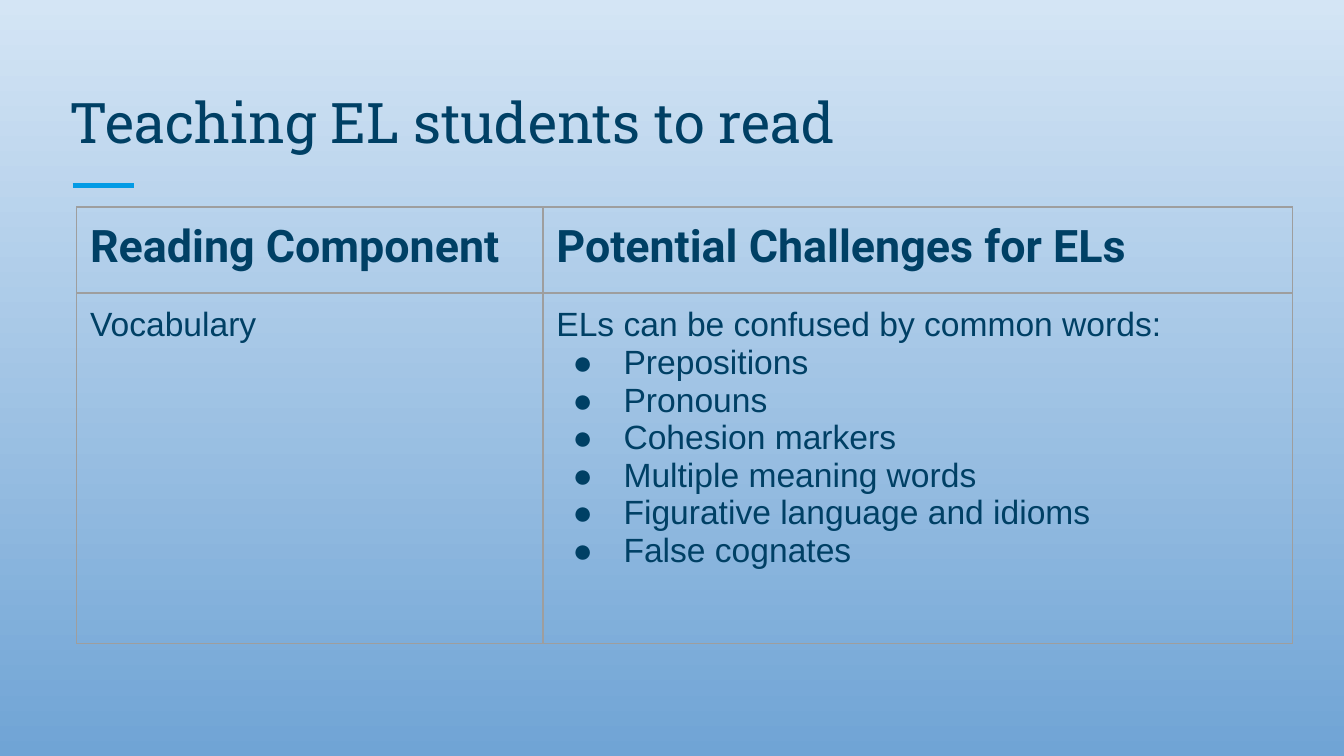
"""Build a slide on the challenges English learners meet when learning to read."""
from dataclasses import dataclass

from lxml import etree
from pptx import Presentation
from pptx import util as u
from pptx.dml.color import RGBColor
from pptx.enum import shapes, text
from pptx.oxml import ns

NAVY = RGBColor(0x00, 0x40, 0x65)
ACCENT = RGBColor(0x03, 0x9B, 0xE5)
BORDER = RGBColor(0x9E, 0x9E, 0x9E)
SKY_TOP = RGBColor(0xD4, 0xE5, 0xF5)
SKY_BOTTOM = RGBColor(0x70, 0xA4, 0xD5)
INSET = u.Inches(0.1)
COLUMN_WIDTHS = (3.47, 5.58)
ROW_HEIGHTS = (0.64, 2.61)
PLAIN_TABLE_STYLE = "{2D5ABB26-0587-4C30-8999-92F81FD0307C}"


@dataclass(frozen=True)
class Style:
    font: str
    size: int
    bold: bool = False


@dataclass(frozen=True)
class Entry:
    style: Style
    lead: str
    bullets: tuple[str, ...] = ()


TITLE = Style("Roboto Slab", 30)
HEADING = Style("Roboto", 24, True)
BODY = Style("Arial", 18)

ROWS = (
    (Entry(HEADING, "Reading Component"), Entry(HEADING, "Potential Challenges for ELs")),
    (
        Entry(BODY, "Vocabulary"),
        Entry(BODY, "ELs can be confused by common words:", (
            "Prepositions",
            "Pronouns",
            "Cohesion markers",
            "Multiple meaning words",
            "Figurative language and idioms",
            "False cognates",
        )),
    ),
)


def add_run(paragraph, wording: str, style: Style) -> None:
    """Append one formatted run to a paragraph."""
    run = paragraph.add_run()
    run.text = wording
    run.font.name = style.font
    run.font.size = u.Pt(style.size)
    run.font.bold = style.bold
    run.font.color.rgb = NAVY


def add_bullet(paragraph, style: Style) -> None:
    """Give a paragraph a hanging round bullet."""
    properties = paragraph._p.get_or_add_pPr()
    properties.set("marL", str(u.Inches(0.5)))
    properties.set("indent", str(u.Inches(-0.38)))
    colour = etree.SubElement(properties, ns.qn("a:buClr"))
    etree.SubElement(colour, ns.qn("a:srgbClr"), val=str(NAVY))
    etree.SubElement(properties, ns.qn("a:buSzPts"), val=str(style.size * 100))
    etree.SubElement(properties, ns.qn("a:buFont"), typeface=style.font)
    etree.SubElement(properties, ns.qn("a:buChar"), char="●")


def add_borders(cell) -> None:
    """Draw a thin line on all four sides of a cell."""
    properties = cell._tc.get_or_add_tcPr()
    for position, side in enumerate(("a:lnL", "a:lnR", "a:lnT", "a:lnB")):
        line = etree.Element(ns.qn(side), w=str(u.Pt(0.75)))
        fill = etree.SubElement(line, ns.qn("a:solidFill"))
        etree.SubElement(fill, ns.qn("a:srgbClr"), val=str(BORDER))
        etree.SubElement(line, ns.qn("a:prstDash"), val="solid")
        properties.insert(position, line)


def set_margins(box) -> None:
    """Apply the common inset to a cell or text frame."""
    box.margin_left = box.margin_right = box.margin_top = box.margin_bottom = INSET


def fill_cell(cell, entry: Entry) -> None:
    """Write an entry into a bordered, transparent cell."""
    cell.fill.background()
    add_borders(cell)
    set_margins(cell)
    add_run(cell.text_frame.paragraphs[0], entry.lead, entry.style)
    for bullet in entry.bullets:
        paragraph = cell.text_frame.add_paragraph()
        add_bullet(paragraph, entry.style)
        add_run(paragraph, bullet, entry.style)


def paint_background(slide) -> None:
    """Fill the slide with a gradient running from top to bottom."""
    fill = slide.background.fill
    fill.gradient()
    fill.gradient_angle = 270
    for stop, position, colour in zip(fill.gradient_stops, (0, 1), (SKY_TOP, SKY_BOTTOM)):
        stop.position = position
        stop.color.rgb = colour


def add_accent(slide) -> None:
    """Draw the short rule below the title."""
    accent = slide.shapes.add_connector(
        shapes.MSO_CONNECTOR.STRAIGHT,
        u.Inches(0.54), u.Inches(1.38), u.Inches(1), u.Inches(1.38))
    accent.line.color.rgb = ACCENT
    accent.line.width = u.Pt(3)
    etree.SubElement(accent._element.spPr, ns.qn("a:effectLst"))


def write_title(slide, wording: str) -> None:
    """Place and format the title placeholder."""
    title = slide.shapes.title
    title.left, title.top = u.Inches(0.42), u.Inches(0.5)
    title.width, title.height = u.Inches(9.15), u.Inches(0.75)
    frame = title.text_frame
    frame.word_wrap = True
    frame.auto_size = text.MSO_AUTO_SIZE.NONE
    frame.vertical_anchor = text.MSO_ANCHOR.BOTTOM
    set_margins(frame)
    frame.paragraphs[0].alignment = text.PP_ALIGN.LEFT
    add_run(frame.paragraphs[0], wording, TITLE)


def add_challenges(slide) -> None:
    """Add the table of reading components and challenges."""
    challenges = slide.shapes.add_table(
        len(ROW_HEIGHTS), len(COLUMN_WIDTHS), u.Inches(0.57), u.Inches(1.54),
        u.Inches(sum(COLUMN_WIDTHS)), u.Inches(sum(ROW_HEIGHTS))).table
    challenges.first_row = challenges.horz_banding = False
    challenges._tbl.tblPr.find(ns.qn("a:tableStyleId")).text = PLAIN_TABLE_STYLE
    for column, width in zip(challenges.columns, COLUMN_WIDTHS):
        column.width = u.Inches(width)
    for row, height, entries in zip(challenges.rows, ROW_HEIGHTS, ROWS):
        row.height = u.Inches(height)
        for cell, entry in zip(row.cells, entries):
            fill_cell(cell, entry)


def main() -> None:
    """Assemble and save the slide."""
    deck = Presentation()
    deck.slide_width = u.Inches(10)
    deck.slide_height = deck.slide_width * 9 // 16
    slide = deck.slides.add_slide(deck.slide_layouts.get_by_name("Title Only"))
    paint_background(slide)
    add_accent(slide)
    write_title(slide, "Teaching EL students to read")
    add_challenges(slide)
    deck.save("out.pptx")


if __name__ == "__main__":
    main()
